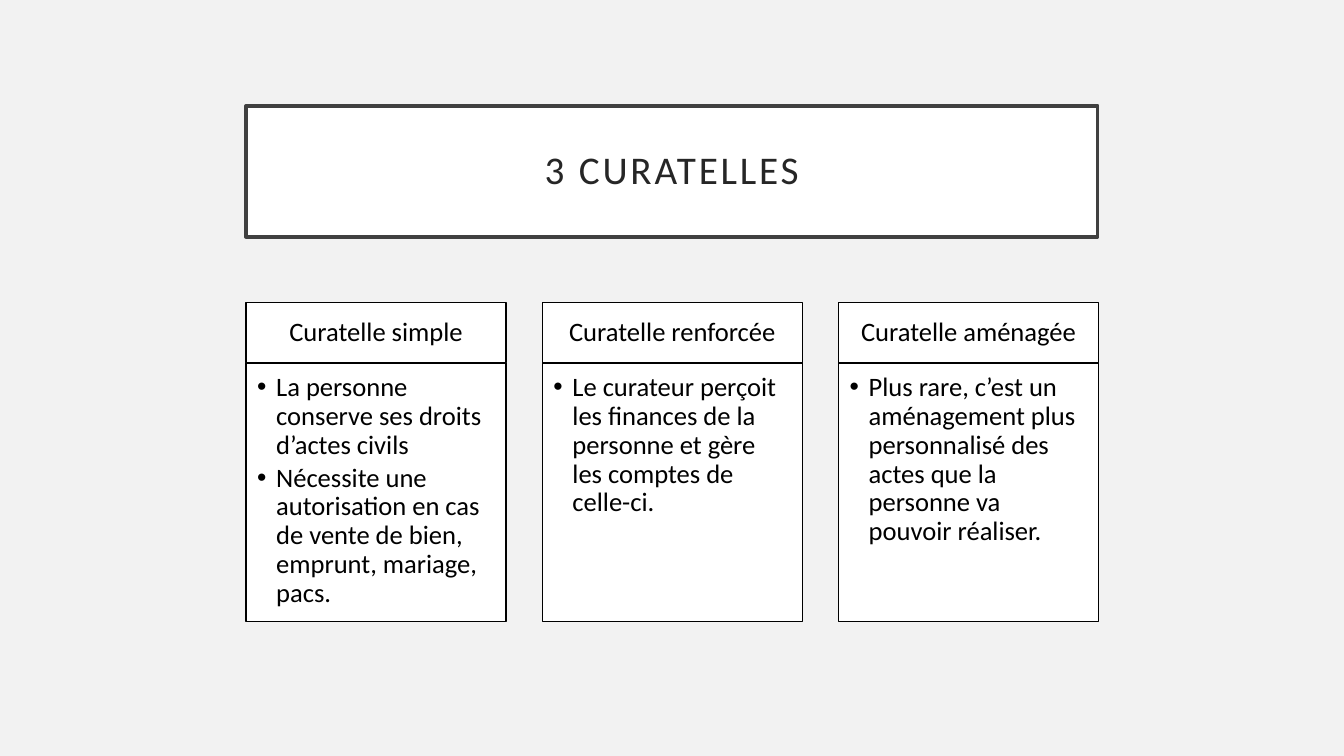
from lxml.etree import SubElement
from pptx import Presentation
from pptx.dml.color import RGBColor
from pptx.enum.shapes import MSO_SHAPE
from pptx.enum.text import MSO_ANCHOR, PP_ALIGN
from pptx.oxml.ns import qn
from pptx.util import Pt

TITLE = "3 CURATELLES"
CURATELLES = [
    ("Curatelle simple", [
        "La personne conserve ses droits d’actes civils",
        "Nécessite une autorisation en cas de vente de bien, emprunt, mariage, pacs.",
    ]),
    ("Curatelle renforcée", [
        "Le curateur perçoit les finances de la personne et gère les comptes de celle-ci.",
    ]),
    ("Curatelle aménagée", [
        "Plus rare, c’est un aménagement plus personnalisé des actes que la personne va pouvoir réaliser.",
    ]),
]

BACKGROUND = RGBColor(0xF2, 0xF2, 0xF2)
WHITE = RGBColor(0xFF, 0xFF, 0xFF)
BLACK = RGBColor(0, 0, 0)
TITLE_LINE = RGBColor(0x40, 0x40, 0x40)
TITLE_TEXT = RGBColor(0x26, 0x26, 0x26)

LEFT = 175.7
COLUMN_WIDTH, COLUMN_STEP = 185.8, 211.6
HEADER_TOP, HEADER_HEIGHT, BODY_HEIGHT = 216, 43.2, 185
BULLET_INDENT = 13.7


def add_box(page, place, line_color, line_width, margins, anchor):
    """Add a white outlined rectangle and return its text frame."""
    box = page.shapes.add_shape(MSO_SHAPE.RECTANGLE, *map(Pt, place))
    box.shadow.inherit = False
    box.fill.solid()
    box.fill.fore_color.rgb = WHITE
    box.line.color.rgb = line_color
    box.line.width = Pt(line_width)
    frame = box.text_frame
    frame.word_wrap = True
    frame.vertical_anchor = anchor
    (frame.margin_left, frame.margin_top,
     frame.margin_right, frame.margin_bottom) = map(Pt, margins)
    return frame


def write_lines(frame, lines, size, color, alignment):
    for index, line in enumerate(lines):
        para = frame.paragraphs[0] if index == 0 else frame.add_paragraph()
        para.text = line
        para.alignment = alignment
        para.line_spacing = 0.9
        para.font.name = "Calibri"
        para.font.size = Pt(size)
        para.font.color.rgb = color


def add_bullet(para):
    para.space_after = Pt(2.85)
    properties = para._p.get_or_add_pPr()
    properties.set("marL", str(Pt(BULLET_INDENT)))
    properties.set("indent", str(-Pt(BULLET_INDENT)))
    SubElement(properties, qn("a:buFont")).set("typeface", "Arial")
    bullet = SubElement(properties, qn("a:buChar"))
    bullet.set("char", "•")
    # Bullet elements precede the default run properties in the schema.
    defaults = properties.find(qn("a:defRPr"))
    if defaults is not None:
        properties.append(defaults)


def add_title(page):
    frame = add_box(page, (LEFT, 75.6, 608.4, 93.6), TITLE_LINE, 2.5,
                    (14.4,) * 4, MSO_ANCHOR.MIDDLE)
    write_lines(frame, [TITLE], 28, TITLE_TEXT, PP_ALIGN.CENTER)
    span = frame.paragraphs[0].runs[0]
    span._r.get_or_add_rPr().set("spc", "200")


def add_column(page, left, heading, points):
    header = add_box(page, (left, HEADER_TOP, COLUMN_WIDTH, HEADER_HEIGHT), BLACK, 1,
                     (10.8, 5.8, 10.8, 5.8), MSO_ANCHOR.MIDDLE)
    write_lines(header, [heading], 19, BLACK, PP_ALIGN.CENTER)
    body = add_box(page, (left, HEADER_TOP + HEADER_HEIGHT, COLUMN_WIDTH, BODY_HEIGHT),
                   BLACK, 1, (7.9, 7.9, 10.8, 12.2), MSO_ANCHOR.TOP)
    write_lines(body, points, 19, BLACK, PP_ALIGN.LEFT)
    for para in body.paragraphs:
        add_bullet(para)


def main():
    deck = Presentation()
    deck.slide_width, deck.slide_height = Pt(960), Pt(540)
    page = deck.slides.add_slide(deck.slide_layouts[6])
    page.background.fill.solid()
    page.background.fill.fore_color.rgb = BACKGROUND
    add_title(page)
    for index, (heading, points) in enumerate(CURATELLES):
        add_column(page, LEFT + index * COLUMN_STEP, heading, points)
    deck.save("out.pptx")


if __name__ == "__main__":
    main()
